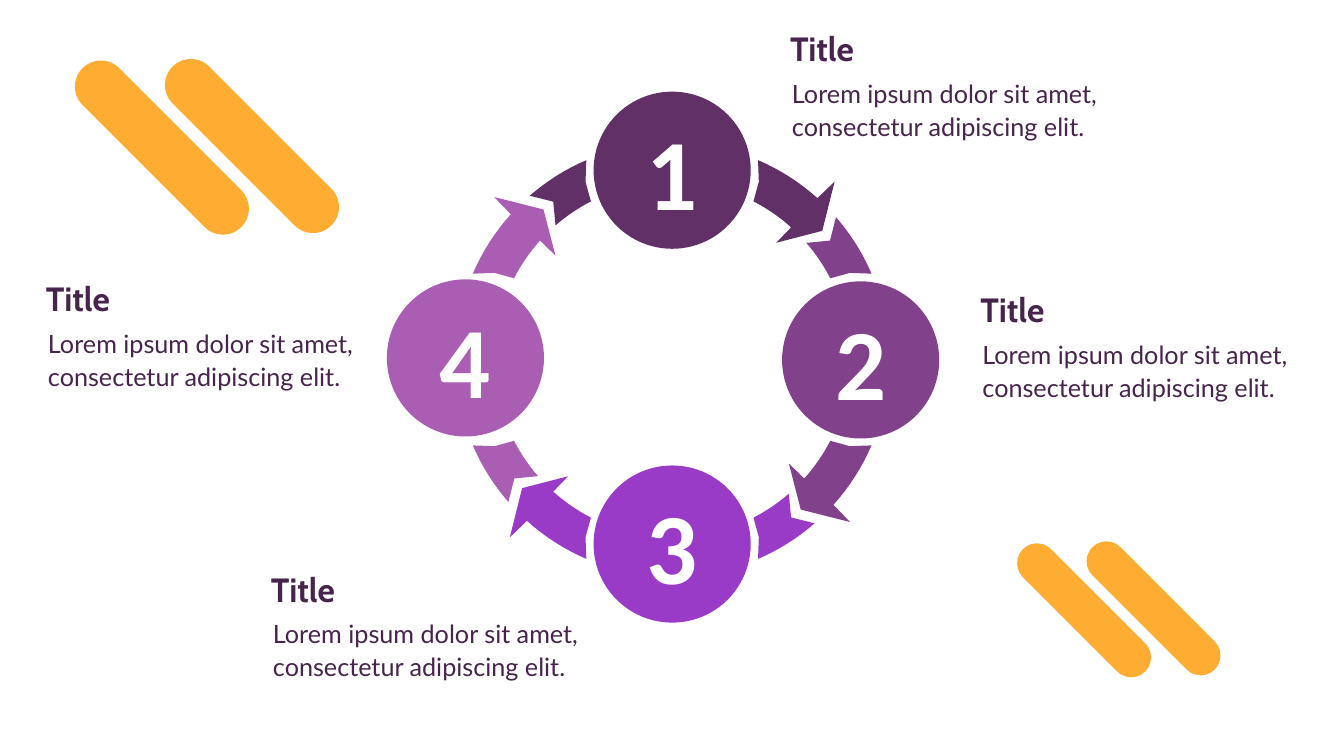
from math import cos, radians, sin

from pptx import Presentation
from pptx.dml.color import RGBColor
from pptx.enum.shapes import MSO_SHAPE as Preset
from pptx.enum.text import MSO_ANCHOR as Anchor, MSO_AUTO_SIZE as AutoSize, PP_ALIGN as Align
from pptx.util import Cm, Pt

PLUM = RGBColor(0x60, 0x30, 0x66)
MAUVE = RGBColor(0x82, 0x41, 0x8B)
VIOLET = RGBColor(0x99, 0x3B, 0xC7)
ORCHID = RGBColor(0xA9, 0x5D, 0xB3)
ORANGE = RGBColor(0xFF, 0xAC, 0x32)
TEXT_COLOR = RGBColor(0x47, 0x24, 0x4C)
WHITE = RGBColor(0xFF, 0xFF, 0xFF)

HEADING = "Title"
BODY = "Lorem ipsum dolor sit amet, consectetur adipiscing elit."
CIRCLE_SIZE = 3.96

# Ring measures in cm
RING_X, RING_Y = 16.94, 9.06
OUTER, MIDDLE, INNER = 5.47, 4.98, 4.48
BARB_OUTER, BARB_INNER = 6.07, 3.94
ARC_STEPS = 8

# Colour, circle corner and label corner of each step, in cm
STEPS = [
    (PLUM, (14.96, 2.31), (19.66, 0.58)),
    (MAUVE, (19.71, 7.09), (24.46, 7.16)),
    (VIOLET, (14.96, 11.73), (6.58, 14.2)),
    (ORCHID, (9.75, 7.04), (0.91, 6.88)),
]

# Centre, length and thickness of each slanted bar, in cm
BARS = [
    ((6.35, 3.68), 5.66, 1.31),
    ((4.08, 3.72), 5.66, 1.31),
    ((29.07, 15.33), 4.36, 1),
    ((27.32, 15.38), 4.36, 1),
]


def paint(shape, color):
    shape.shadow.inherit = False
    shape.fill.solid()
    shape.fill.fore_color.rgb = color
    shape.line.fill.background()


def style_text(paragraph, font_name, size, color, bold=False):
    for run in paragraph.runs:
        run.font.name = font_name
        run.font.size = Pt(size)
        run.font.bold = bold
        run.font.color.rgb = color


def arc(radius, start, end):
    return [(radius, start + (end - start) * step / ARC_STEPS)
            for step in range(ARC_STEPS + 1)]


def ring_band(end, head):
    """Polar outline that leaves the circle, reaches the end angle and has the given head."""
    side = 1 if end > 0 else -1
    return (arc(OUTER, 23.3 * side, end) + head + arc(INNER, end, 27.2 * side)
            + [(MIDDLE, 26 * side)])


TAIL = ring_band(-41, [(MIDDLE, -37)])
ARROW = ring_band(42, [(BARB_OUTER, 42.4), (MIDDLE, 49.4), (BARB_INNER, 41.7)])


def add_ring_piece(slide, color, outline, turn):
    """Draw a polar outline, with angles clockwise from the top, turned about the ring's centre."""
    start, *others = [
        (Cm(RING_X + radius * sin(radians(angle + turn))),
         Cm(RING_Y - radius * cos(radians(angle + turn))))
        for radius, angle in outline]
    builder = slide.shapes.build_freeform(*start)
    builder.add_line_segments(others, close=True)
    paint(builder.convert_to_shape(), color)


def add_number_circle(slide, number, color, left, top):
    circle = slide.shapes.add_shape(
        Preset.OVAL, Cm(left), Cm(top), Cm(CIRCLE_SIZE), Cm(CIRCLE_SIZE))
    paint(circle, color)
    circle.text_frame.text = str(number)
    circle.text_frame.vertical_anchor = Anchor.MIDDLE
    paragraph = circle.text_frame.paragraphs[0]
    paragraph.alignment = Align.CENTER
    style_text(paragraph, "Calibri", 72, WHITE, bold=True)


def add_text(slide, text, left, top, width, height, inset, wrap):
    box = slide.shapes.add_textbox(Cm(left), Cm(top), Cm(width), Cm(height))
    frame = box.text_frame
    frame.text = text
    frame.word_wrap = wrap
    frame.auto_size = AutoSize.SHAPE_TO_FIT_TEXT
    frame.margin_left = frame.margin_right = Cm(inset)
    frame.margin_top = frame.margin_bottom = Cm(inset / 2)
    return frame.paragraphs[0]


def add_label(slide, left, top):
    heading = add_text(slide, HEADING, left, top, 2.24, 1.27, 0.25, wrap=False)
    style_text(heading, "Cabin", 24, TEXT_COLOR, bold=True)
    body = add_text(slide, BODY, left, top + 1.16, 10.69, 1.96, 0.3, wrap=True)
    body.line_spacing = 1.1
    style_text(body, "Lato", 18, TEXT_COLOR)


def add_slanted_bar(slide, center, length, thickness):
    x, y = center
    bar = slide.shapes.add_shape(
        Preset.ROUNDED_RECTANGLE, Cm(x - length / 2), Cm(y - thickness / 2),
        Cm(length), Cm(thickness))
    bar.adjustments[0] = 0.5
    bar.rotation = 45
    paint(bar, ORANGE)


def main():
    presentation = Presentation()
    presentation.slide_width = Cm(33.87)
    presentation.slide_height = Cm(19.05)
    slide = presentation.slides.add_slide(presentation.slide_layouts[6])

    for index, (color, circle_corner, label_corner) in enumerate(STEPS):
        for outline in (TAIL, ARROW):
            add_ring_piece(slide, color, outline, 90 * index)
        add_number_circle(slide, index + 1, color, *circle_corner)
        add_label(slide, *label_corner)
    for bar in BARS:
        add_slanted_bar(slide, *bar)

    presentation.save("out.pptx")


if __name__ == "__main__":
    main()
